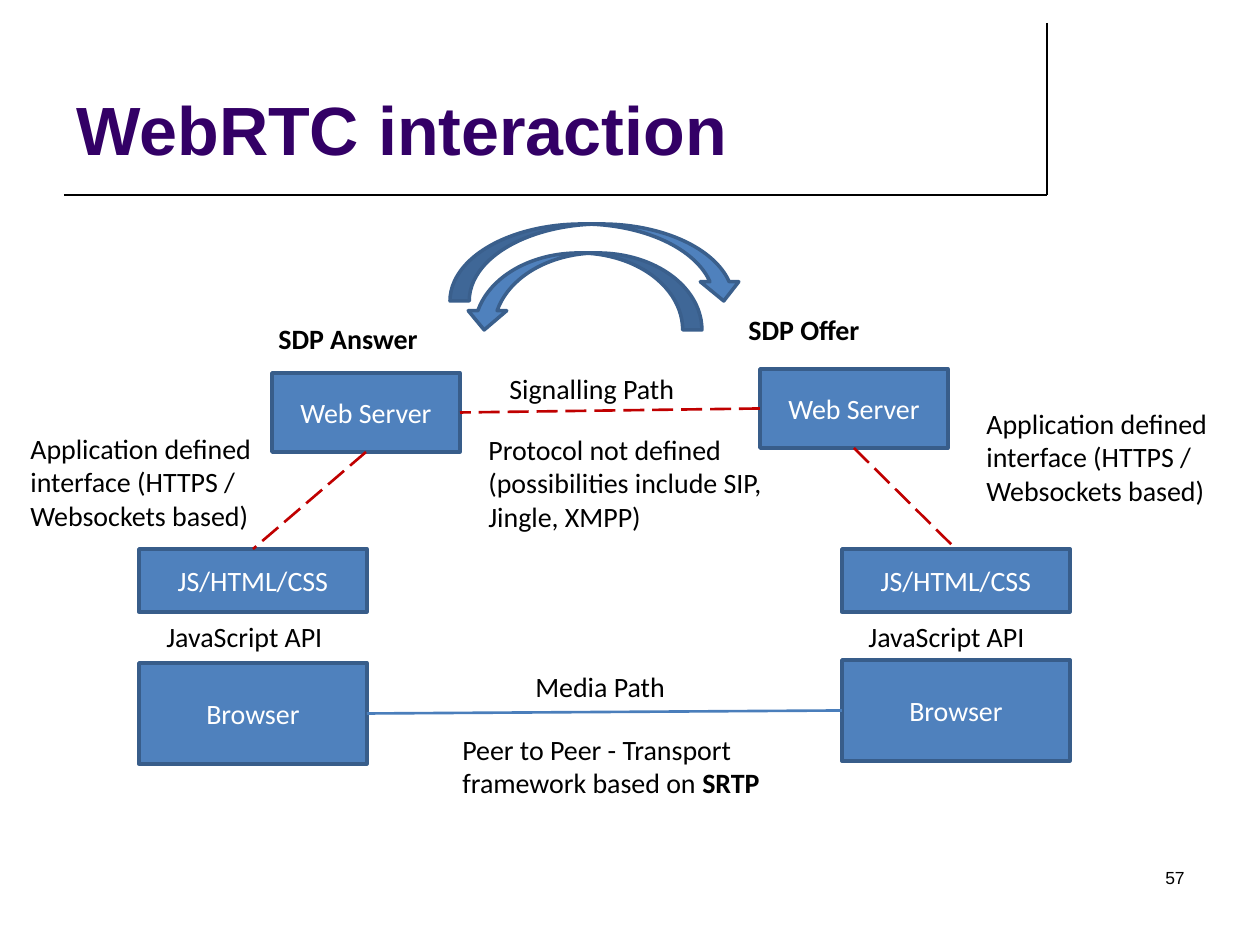
from dataclasses import dataclass

from lxml import etree
from pptx import Presentation, util as u
from pptx.dml.color import RGBColor
from pptx.enum import dml, shapes, text
from pptx.oxml.ns import qn


@dataclass(frozen=True)
class Theme:
    heading_font: str = "Arial"
    body_font: str = "Calibri"
    title_size: int = 39
    body_size: int = 16
    number_size: int = 10
    title: str = "330066"
    ink: str = "000000"
    on_fill: str = "FFFFFF"
    fill: str = "4F81BD"
    outline: str = "385D8A"
    arrow_outline: str = "3A5F8C"
    signalling: str = "C00000"
    media: str = "4A7EBB"


THEME = Theme()
TOP, LEFT, BOTTOM, RIGHT = range(4)

# Boxes are (left, top, width, height) in px, 126 px to the inch
TITLE = ("WebRTC interaction", (64, 16, 983, 159))
PAGE_NUMBER = ("57", (903, 861, 294, 63))
RULES = [(1047, 23, 1047, 195), (64, 195, 1047, 195)]

NODES = {
    "left server": ("Web Server", (272, 373, 188, 79)),
    "right server": ("Web Server", (760, 369, 188, 79)),
    "left page": ("JS/HTML/CSS", (139, 549, 228, 63)),
    "right page": ("JS/HTML/CSS", (842, 549, 228, 63)),
    "left browser": ("Browser", (139, 663, 228, 101)),
    "right browser": ("Browser", (842, 660, 228, 101)),
}
LINKS = [
    ("left server", BOTTOM, "left page", TOP, THEME.signalling, True),
    ("right server", LEFT, "left server", RIGHT, THEME.signalling, True),
    ("right server", BOTTOM, "right page", TOP, THEME.signalling, True),
    ("right browser", LEFT, "left browser", RIGHT, THEME.media, False),
]

INTERFACE = "Application defined interface (HTTPS / Websockets based)"
# Each label is a list of (words, bold) runs
LABELS = [
    ([("JavaScript API", False)], (154, 613, 218, 47)),
    ([("JavaScript API", False)], (856, 613, 218, 47)),
    ([("Media Path", False)], (523, 663, 179, 47)),
    ([("Peer to Peer - Transport framework based on ", False), ("SRTP", True)],
     (450, 726, 358, 113)),
    ([("Signalling Path", False)], (497, 365, 241, 47)),
    ([("Protocol not defined (possibilities include SIP, Jingle, XMPP)", False)],
     (476, 426, 300, 180)),
    ([(INTERFACE, False)], (18, 425, 272, 180)),
    ([(INTERFACE, False)], (974, 400, 286, 180)),
    ([("SDP Offer", True)], (736, 306, 178, 47)),
    ([("SDP Answer", True)], (266, 315, 215, 47)),
]
# (box, points left)
EXCHANGE_ARROWS = [((450, 224, 293, 77), False), ((465, 253, 237, 77), True)]


def px(*lengths):
    return [u.Emu(round(length * 914400 / 126)) for length in lengths]


def rgb(color):
    return RGBColor.from_string(color)


def set_font(font, name, size, color):
    font.name, font.size = name, u.Pt(size)
    font.color.rgb = rgb(color)


def add_text(slide, runs, box, font, size, color,
             align=text.PP_ALIGN.LEFT, anchor=text.MSO_ANCHOR.TOP):
    frame = slide.shapes.add_textbox(*px(*box)).text_frame
    frame.word_wrap, frame.vertical_anchor = True, anchor
    paragraph = frame.paragraphs[0]
    paragraph.alignment = align
    set_font(paragraph.font, font, size, color)
    for words, bold in runs:
        run = paragraph.add_run()
        run.text, run.font.bold = words, bold


def add_block(slide, preset, box, outline):
    block = slide.shapes.add_shape(preset, *px(*box))
    block.shadow.inherit = False
    block.fill.solid()
    block.fill.fore_color.rgb = rgb(THEME.fill)
    block.line.color.rgb = rgb(outline)
    block.line.width = u.Pt(2)
    return block


def add_node(slide, name, box):
    node = add_block(slide, shapes.MSO_SHAPE.RECTANGLE, box, THEME.outline)
    frame = node.text_frame
    frame.word_wrap, frame.vertical_anchor = True, text.MSO_ANCHOR.MIDDLE
    paragraph = frame.paragraphs[0]
    paragraph.text, paragraph.alignment = name, text.PP_ALIGN.CENTER
    set_font(paragraph.font, THEME.body_font, THEME.body_size, THEME.on_fill)
    return node


def add_line(slide, ends, color, width):
    line = slide.shapes.add_connector(shapes.MSO_CONNECTOR.STRAIGHT, *px(*ends))
    line.line.color.rgb = rgb(color)
    line.line.width = u.Pt(width)
    etree.SubElement(line._element.spPr, qn("a:effectLst"))
    return line


def main():
    deck = Presentation()
    deck.slide_width, deck.slide_height = px(1260, 945)
    slide = deck.slides.add_slide(deck.slide_layouts[6])

    for ends in RULES:
        add_line(slide, ends, THEME.ink, 1)
    heading, box = TITLE
    add_text(slide, [(heading, True)], box, THEME.heading_font, THEME.title_size,
             THEME.title, anchor=text.MSO_ANCHOR.BOTTOM)
    number, box = PAGE_NUMBER
    add_text(slide, [(number, False)], box, THEME.heading_font, THEME.number_size,
             THEME.ink, align=text.PP_ALIGN.RIGHT)

    nodes = {key: add_node(slide, *node) for key, node in NODES.items()}
    for start, start_side, end, end_side, color, dashed in LINKS:
        link = add_line(slide, (0, 0, 0, 0), color, 1.5)
        link.begin_connect(nodes[start], start_side)
        link.end_connect(nodes[end], end_side)
        if dashed:
            link.line.dash_style = dml.MSO_LINE.LONG_DASH

    for runs, box in LABELS:
        add_text(slide, runs, box, THEME.body_font, THEME.body_size, THEME.ink)
    for box, points_left in EXCHANGE_ARROWS:
        arrow = add_block(slide, shapes.MSO_SHAPE.CURVED_DOWN_ARROW, box,
                          THEME.arrow_outline)
        if points_left:
            arrow._element.spPr.find(qn("a:xfrm")).set("flipH", "1")

    deck.save("out.pptx")


if __name__ == "__main__":
    main()
